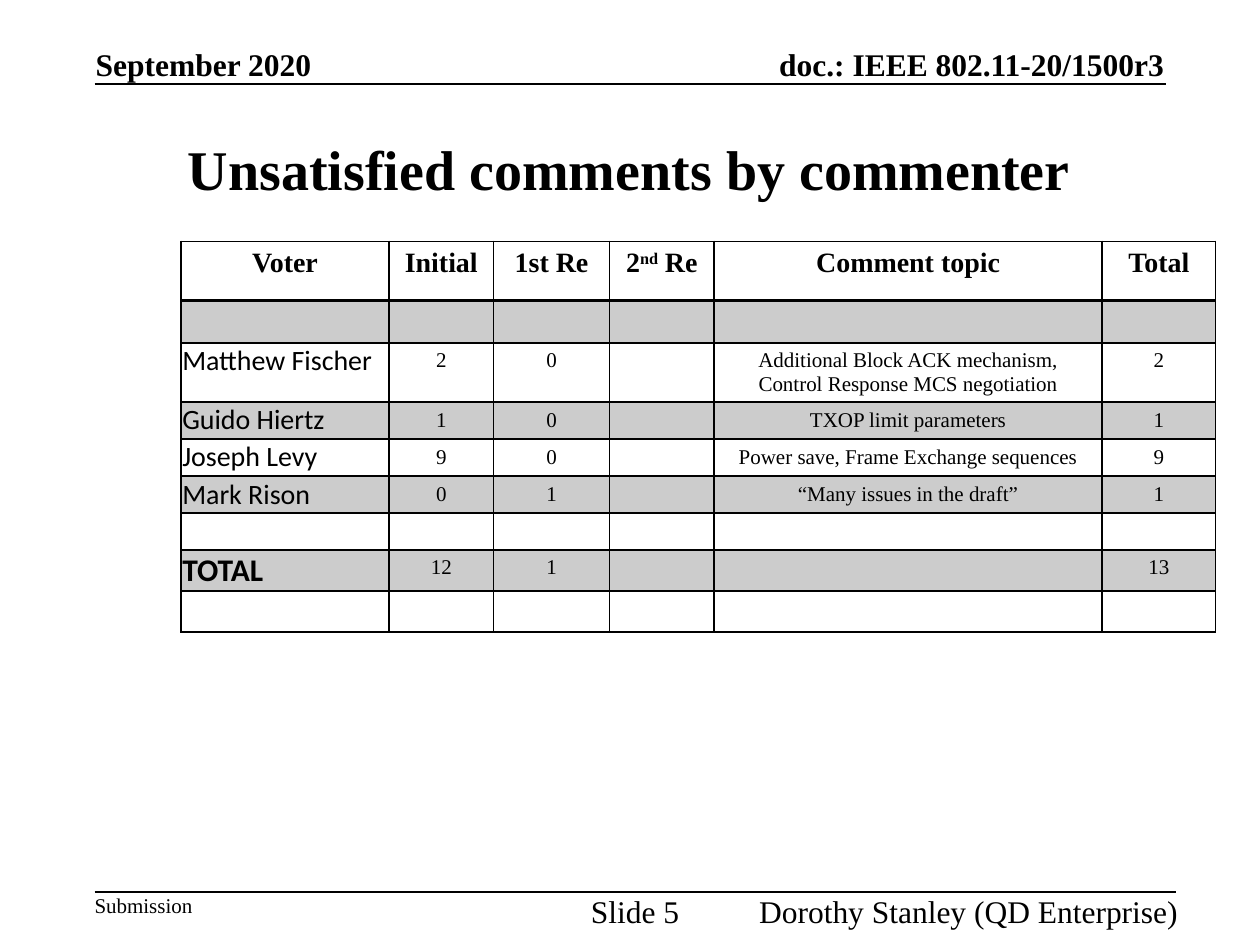
"""Build the slide that lists unsatisfied comments by commenter."""
from lxml.etree import SubElement
from pptx import Presentation
from pptx.dml.color import RGBColor
from pptx.enum.shapes import MSO_CONNECTOR as Connector
from pptx.enum.text import MSO_ANCHOR as Anchor, PP_ALIGN as Align
from pptx.oxml.ns import qn
from pptx.util import Pt

BLACK = "000000"
SERIF, SANS = "Times New Roman", "Calibri"

LABELS = [
    ("doc.: IEEE 802.11-20/1500r3", (397.4, 25.9, 267.8, 21.6), Align.RIGHT, Anchor.BOTTOM, 18, True),
    ("September 2020", (54.7, 25.9, 130, 21.6), Align.LEFT, Anchor.BOTTOM, 18, True),
    ("Submission", (54, 509.8, 60, 14.4), Align.LEFT, Anchor.TOP, 12, False),
    ("Slide 5", (332.9, 509.8, 60, 21.6), Align.CENTER, Anchor.TOP, 18, False),
    ("Dorothy Stanley (QD Enterprise)", (423.2, 509.8, 250, 21.6), Align.RIGHT, Anchor.TOP, 18, False),
]
TITLE = "Unsatisfied comments by commenter"
TITLE_FRAME = (25.2, 54, 668.9, 84.2)
RULES = [(54, 666, 48.2), (54, 671.8, 509.8)]

ROWS = [
    ("Voter", "Initial", "1st Re", ("2", "nd", " Re"), "Comment topic", "Total"),
    ("",) * 6,
    ("Matthew Fischer", "2", "0", "", "Additional Block ACK mechanism, Control Response MCS negotiation", "2"),
    ("Guido Hiertz", "1", "0", "", "TXOP limit parameters", "1"),
    ("Joseph Levy", "9", "0", "", "Power save, Frame Exchange sequences", "9"),
    ("Mark Rison", "0", "1", "", "“Many issues in the draft”", "1"),
    ("",) * 6,
    ("TOTAL", "12", "1", "", "", "13"),
    ("",) * 6,
]
TABLE_LEFT, TABLE_TOP = 103.5, 138
WIDTHS = [118.8, 59.8, 66.2, 59.8, 221.8, 64.8]
HEIGHTS = [34, 24, 33.8, 21.2, 21.2, 21.2, 21, 23.4, 23.4]


def color(value):
    return RGBColor.from_string(value)


def assign(target, **values):
    for name, value in values.items():
        setattr(target, name, value)


def write(para, text, size, font=SERIF, bold=False):
    span = para.add_run()
    span.text = text
    assign(span.font, size=Pt(size), name=font, bold=bold)
    span.font.color.rgb = color(BLACK)
    return span


def add_label(page, text, frame, align, anchor, size, bold, inset=(0, 0)):
    box = page.shapes.add_textbox(*map(Pt, frame)).text_frame
    side, edge = map(Pt, inset)
    assign(box, word_wrap=True, vertical_anchor=anchor, margin_left=side, margin_right=side,
           margin_top=edge, margin_bottom=edge)
    para = box.paragraphs[0]
    para.alignment = align
    write(para, text, size, bold=bold)


def add_rule(page, left, right, top):
    rule = page.shapes.add_connector(Connector.STRAIGHT, Pt(left), Pt(top), Pt(right), Pt(top))
    rule.line.color.rgb = color(BLACK)
    rule.line.width = Pt(1)
    SubElement(rule._element.spPr, qn("a:effectLst"))


def frame_cell(cell, row):
    heavy = {"lnB": 0, "lnT": 1}
    properties = cell._tc.get_or_add_tcPr()
    for side in ("lnL", "lnR", "lnT", "lnB"):
        width = 2 if heavy.get(side) == row else 1
        line = SubElement(properties, qn(f"a:{side}"), w=str(Pt(width)))
        SubElement(SubElement(line, qn("a:solidFill")), qn("a:srgbClr"), val=BLACK)


def shade_cell(cell, row):
    if row % 2 == 0:
        cell.fill.background()
        return
    cell.fill.solid()
    cell.fill.fore_color.rgb = color(BLACK)
    tint = cell._tc.tcPr.find(qn("a:solidFill")).find(qn("a:srgbClr"))
    SubElement(tint, qn("a:alpha"), val="20000")


def fill_cell(cell, content, row, column):
    para = cell.text_frame.paragraphs[0]
    if row > 0:
        cell.margin_bottom = Pt(1)
    if not content:
        SubElement(para._p, qn("a:endParaRPr"), sz="1200")
    elif row == 0:
        para.alignment = Align.CENTER
        parts = [content] if isinstance(content, str) else content
        for index, part in enumerate(parts):
            span = write(para, part, 16, bold=True)
            if index == 1:
                span.font._element.set("baseline", "30000")
    elif column == 0:
        inset = Pt(0.7)
        assign(cell, margin_left=inset, margin_right=inset, margin_top=inset, margin_bottom=inset)
        total = content == "TOTAL"
        write(para, content, 18 if total else 16, SANS, total)
    else:
        para.alignment = Align.CENTER
        write(para, content, 12)


def add_comments(page):
    table = page.shapes.add_table(
        len(ROWS), len(WIDTHS), Pt(TABLE_LEFT), Pt(TABLE_TOP), Pt(sum(WIDTHS)), Pt(sum(HEIGHTS))).table
    assign(table, first_row=False, horz_banding=False)
    for column, width in zip(table.columns, WIDTHS):
        column.width = Pt(width)
    for row, height in zip(table.rows, HEIGHTS):
        row.height = Pt(height)
    for row, contents in enumerate(ROWS):
        for column, content in enumerate(contents):
            cell = table.cell(row, column)
            frame_cell(cell, row)
            shade_cell(cell, row)
            fill_cell(cell, content, row, column)


def main():
    deck = Presentation()
    assign(deck, slide_width=Pt(720), slide_height=Pt(540))
    page = deck.slides.add_slide(deck.slide_layouts[6])
    for label in LABELS:
        add_label(page, *label)
    for rule in RULES:
        add_rule(page, *rule)
    add_label(page, TITLE, TITLE_FRAME, Align.CENTER, Anchor.MIDDLE, 32, True, (7.2, 3.6))
    add_comments(page)
    deck.save("out.pptx")


if __name__ == "__main__":
    main()
